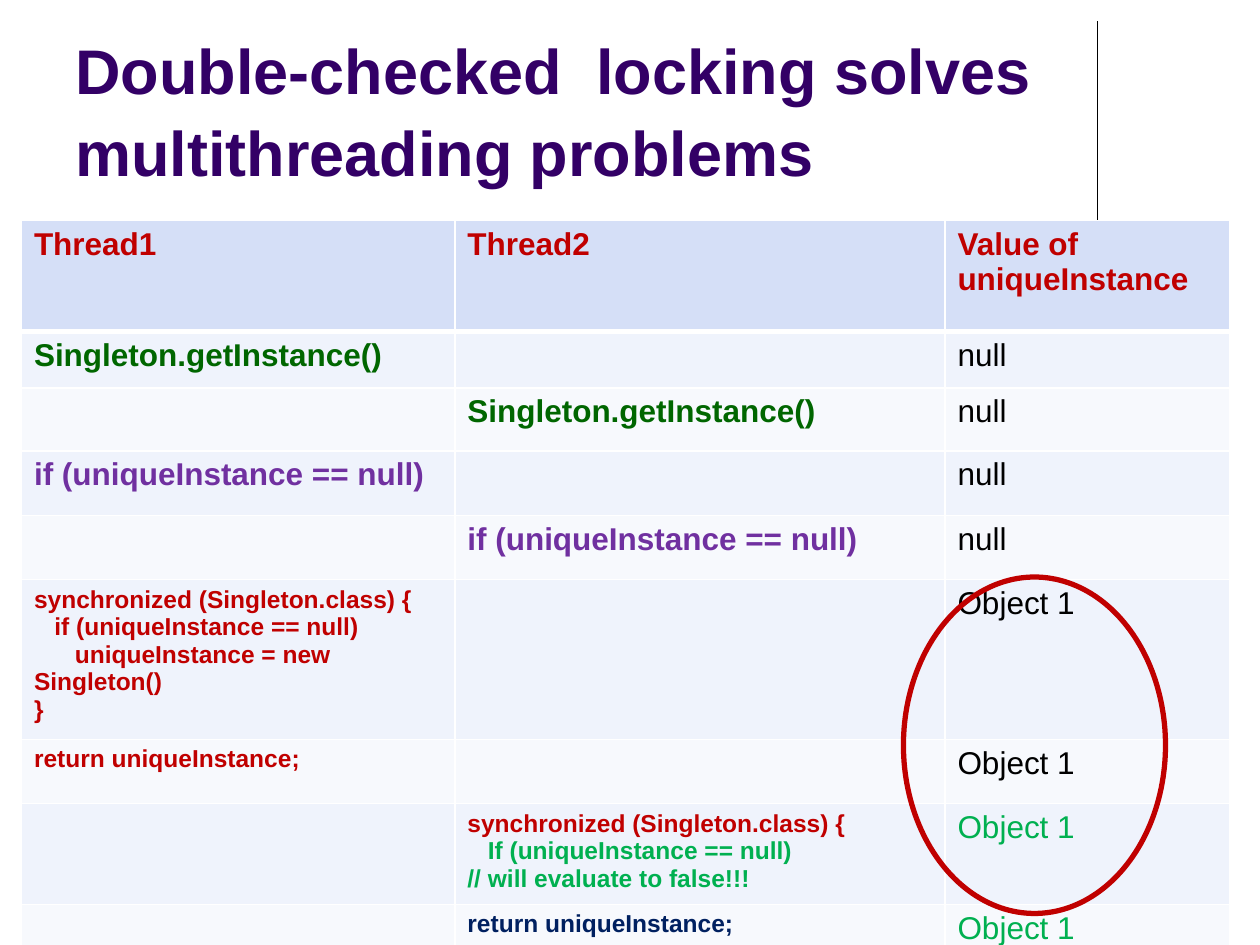
from dataclasses import dataclass

from lxml import etree
from pptx import Presentation
from pptx.dml.color import RGBColor
from pptx.enum import shapes, text
from pptx.oxml import ns
from pptx.util import Inches, Pt

FONT = "Arial"
COLORS = {
    "title": "330066",
    "black": "000000",
    "white": "FFFFFF",
    "red": "C00000",
    "call": "006600",
    "check": "7030A0",
    "green": "00B050",
    "navy": "002060",
    "header": "D5DFF7",
    "odd": "EFF3FC",
    "even": "F7F9FD",
}


@dataclass(frozen=True)
class Span:
    words: str
    color: str
    size: int = 18
    bold: bool = True


@dataclass(frozen=True)
class Step:
    height: float
    cells: tuple[list[list[Span]], ...]


def rgb(name: str) -> RGBColor:
    return RGBColor.from_string(COLORS[name])


def one(words: str, color: str, size: int = 18, bold: bool = True) -> list[list[Span]]:
    return [[Span(words, color, size, bold)]]


def value(words: str, color: str = "black") -> list[list[Span]]:
    return one(words, color, bold=False)


def write(frame, paragraphs: list[list[Span]]) -> None:
    for index, spans in enumerate(paragraphs):
        paragraph = frame.add_paragraph() if index else frame.paragraphs[0]
        for span in spans:
            for number, line in enumerate(span.words.split("\n")):
                if number:
                    paragraph.add_line_break()
                if not line:
                    continue
                run = paragraph.add_run()
                run.text = line
                run.font.name = FONT
                run.font.size = Pt(span.size)
                run.font.bold = span.bold
                run.font.color.rgb = rgb(span.color)


def set_borders(cell, bottom: int) -> None:
    properties = cell._tc.get_or_add_tcPr()
    widths = {"lnL": 1, "lnR": 1, "lnT": 1, "lnB": bottom}
    for index, (side, width) in enumerate(widths.items()):
        border = etree.Element(ns.qn(f"a:{side}"), w=str(Pt(width)))
        fill = etree.SubElement(border, ns.qn("a:solidFill"))
        etree.SubElement(fill, ns.qn("a:srgbClr"), val=COLORS["white"])
        properties.insert(index, border)


def add_title(slide, words: str) -> None:
    title = slide.shapes.add_textbox(Inches(0.5), Inches(0.13), Inches(8.25), Inches(1.42))
    frame = title.text_frame
    frame.word_wrap = True
    frame.vertical_anchor = text.MSO_ANCHOR.BOTTOM
    write(frame, one(words, "title", 36))
    frame.paragraphs[0].line_spacing = 1.08


def add_rule(slide) -> None:
    rule = slide.shapes.add_connector(
        shapes.MSO_CONNECTOR.STRAIGHT, Inches(8.71), Inches(0.17), Inches(8.71), Inches(1.83)
    )
    rule.line.color.rgb = rgb("black")
    rule.line.width = Pt(0.75)
    etree.SubElement(rule._element.spPr, ns.qn("a:effectLst"))


def add_steps(slide, widths: list[float], steps: list[Step]) -> None:
    height = sum(step.height for step in steps)
    table = slide.shapes.add_table(
        len(steps), len(widths), Inches(0.17), Inches(1.75), Inches(sum(widths)), Inches(height)
    ).table
    table.horz_banding = False
    for column, width in zip(table.columns, widths):
        column.width = Inches(width)
    for index, step in enumerate(steps):
        table.rows[index].height = Inches(step.height)
        shade = "header" if index == 0 else "odd" if index % 2 else "even"
        for cell, paragraphs in zip(table.rows[index].cells, step.cells):
            cell.fill.solid()
            cell.fill.fore_color.rgb = rgb(shade)
            set_borders(cell, 1 if index else 3)
            write(cell.text_frame, paragraphs)


def add_highlight(slide) -> None:
    highlight = slide.shapes.add_shape(
        shapes.MSO_SHAPE.OVAL, Inches(7.17), Inches(4.58), Inches(2.08), Inches(2.67)
    )
    highlight.shadow.inherit = False
    highlight.fill.background()
    highlight.line.color.rgb = rgb("red")
    highlight.line.width = Pt(3)


def main() -> None:
    call = one("Singleton.getInstance()", "call")
    check = one("if (uniqueInstance == null)", "check")
    create = [
        [Span("synchronized (Singleton.class) {\n   if (uniqueInstance == null)", "red", 14)],
        [Span("      uniqueInstance = new Singleton()\n}", "red", 14)],
    ]
    recheck = [
        [
            Span("synchronized (Singleton.class) {\n", "red", 14),
            Span("   If (uniqueInstance == null)\n// will evaluate to false!!!", "green", 14),
        ]
    ]
    result = "return uniqueInstance;"
    steps = [
        Step(0.88, (one("Thread1", "red"), one("Thread2", "red"),
                    one("Value of uniqueInstance", "red"))),
        Step(0.45, (call, [], value("null"))),
        Step(0.5, ([], call, value("null"))),
        Step(0.51, (check, [], value("null"))),
        Step(0.51, ([], check, value("null"))),
        Step(0.51, (create, [], value("Object 1"))),
        Step(0.51, (one(result, "red", 14), [], value("Object 1"))),
        Step(0.51, ([], recheck, value("Object 1", "green"))),
        Step(0.51, ([], one(result, "navy", 14), value("Object 1", "green"))),
    ]

    deck = Presentation()
    deck.slide_width = Inches(10)
    deck.slide_height = Inches(7.5)
    slide = deck.slides.add_slide(deck.slide_layouts[6])
    add_rule(slide)
    add_title(slide, "Double-checked  locking solves multithreading problems")
    add_steps(slide, [3.44, 3.89, 2.26], steps)
    add_highlight(slide)
    deck.save("out.pptx")


if __name__ == "__main__":
    main()
